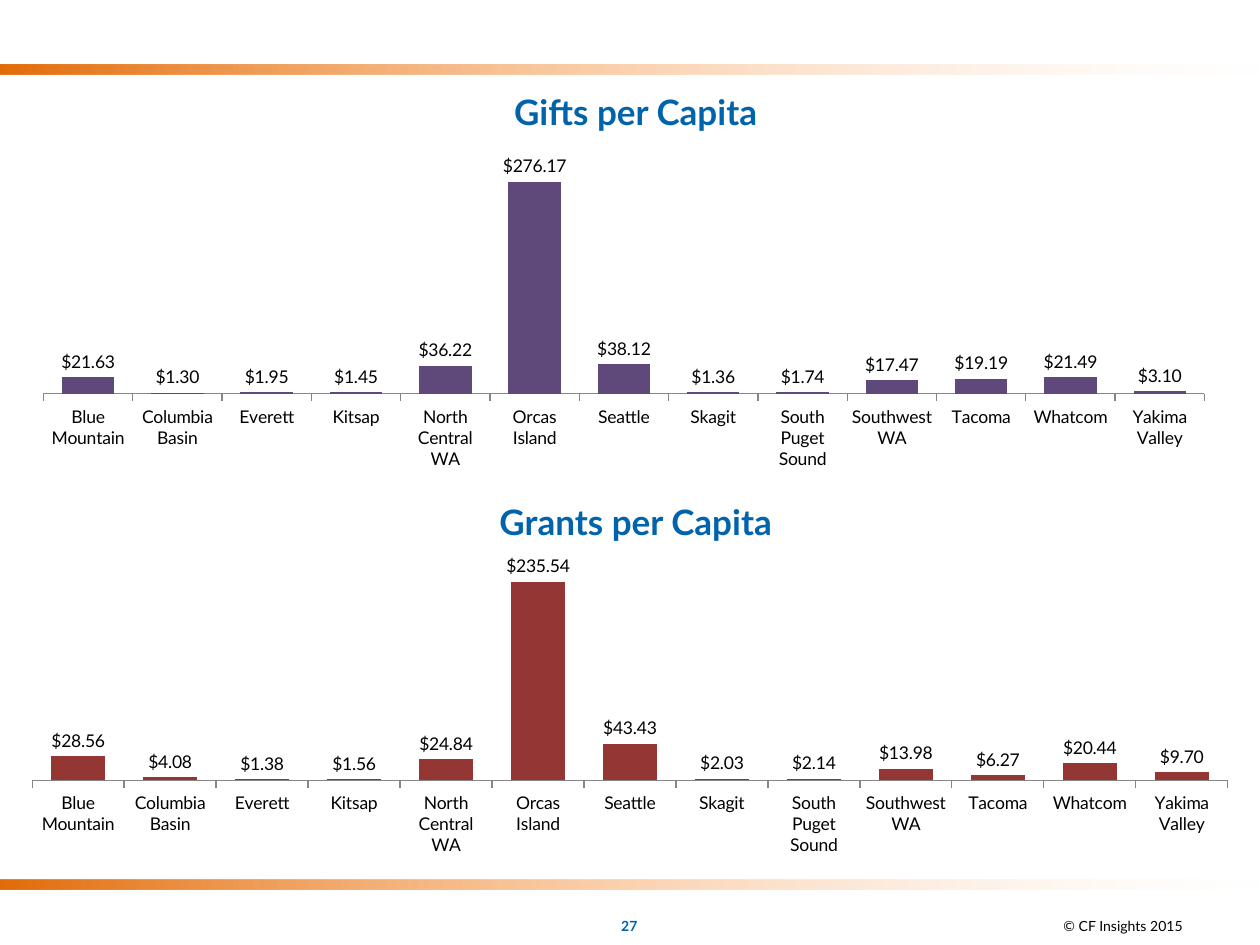
from lxml import etree
from pptx import Presentation
from pptx.chart.data import CategoryChartData
from pptx.dml.color import RGBColor
from pptx.enum.chart import XL_CHART_TYPE, XL_LABEL_POSITION, XL_TICK_MARK
from pptx.enum.shapes import MSO_SHAPE
from pptx.enum.text import MSO_ANCHOR, PP_ALIGN
from pptx.oxml import parse_xml
from pptx.oxml.ns import nsdecls, qn
from pptx.util import Inches, Pt

COLUMN = XL_CHART_TYPE.COLUMN_CLUSTERED
OUT_END = XL_LABEL_POSITION.OUTSIDE_END
OUTSIDE = XL_TICK_MARK.OUTSIDE
RECT = MSO_SHAPE.RECTANGLE
TOP, MIDDLE = MSO_ANCHOR.TOP, MSO_ANCHOR.MIDDLE
CENTER = PP_ALIGN.CENTER

# Content
COLORS = {"blue": "0064AD", "black": "000000", "axis": "868686",
          "gifts": "5F497A", "grants": "943634"}
FONT = "Lato"
MONEY = '"$"#,##0.00'
PLACES = ["Blue Mountain", "Columbia Basin", "Everett", "Kitsap",
          "North Central WA", "Orcas Island", "Seattle", "Skagit",
          "South Puget Sound", "Southwest WA", "Tacoma", "Whatcom",
          "Yakima Valley"]
CHARTS = [
    {"title": "Gifts per Capita", "color": "gifts", "max": 300,
     "head": 0.67, "top": 1.19, "height": 2.65,
     "plot": {"x": 0.01, "y": 0.04, "w": 0.97, "h": 0.69},
     "vals": [21.63, 1.30, 1.95, 1.45, 36.22, 276.17, 38.12, 1.36, 1.74,
              17.47, 19.19, 21.49, 3.10]},
    {"title": "Grants per Capita", "color": "grants", "max": 250,
     "head": 3.92, "top": 4.37, "height": 2.5,
     "plot": {"x": 0, "y": 0.06, "w": 1, "h": 0.67},
     "vals": [28.56, 4.08, 1.38, 1.56, 24.84, 235.54, 43.43, 2.03, 2.14,
              13.98, 6.27, 20.44, 9.70]},
]
BANDS = [6.98, 0.51]
# Gradient stops: position %, colour, opacity %
STOPS = [(0, "E36C09", 100), (50, "F9A661", 50), (100, "FDE1CA", 0)]
HEAD = {"size": Pt(20), "bold": True, "name": FONT}
PAGE = {"size": Pt(8), "bold": True, "name": FONT}
NOTE = {"size": Pt(8), "bold": False, "name": FONT}
LABEL = {"size": Pt(10), "bold": False, "name": FONT}


def rgb(key):
    return RGBColor.from_string(COLORS[key])


def style(font, form, color):
    for key, val in form.items():
        setattr(font, key, val)
    font.color.rgb = rgb(color)


def write(shape, box, text, form, color, anchor):
    shape.left, shape.top, shape.width, shape.height = map(Inches, box)
    frame = shape.text_frame
    frame.word_wrap = True
    frame.vertical_anchor = anchor
    para = frame.paragraphs[0]
    para.alignment = CENTER
    run = para.add_run()
    run.text = text
    style(run.font, form, color)


def add_text(slide, *args):
    write(slide.shapes.add_textbox(0, 0, 0, 0), *args)


def add_band(slide, top):
    band = slide.shapes.add_shape(RECT, 0, Inches(top), Inches(10), Inches(0.08))
    band.shadow.inherit = False
    band.line.fill.background()
    stops = "".join(
        f'<a:gs pos="{pos * 1000}"><a:srgbClr val="{hue}">'
        f'<a:alpha val="{alpha * 1000}"/></a:srgbClr></a:gs>'
        for pos, hue, alpha in STOPS)
    fill = parse_xml(f'<a:gradFill {nsdecls("a")} rotWithShape="1"><a:gsLst>{stops}'
                     '</a:gsLst><a:lin ang="0" scaled="0"/></a:gradFill>')
    band._element.spPr.find(qn("a:prstGeom")).addnext(fill)


def place_plot(chart, plot):
    area = chart._chartSpace.chart.plotArea
    for old in area.findall(qn("c:layout")):
        area.remove(old)
    layout = etree.Element(qn("c:layout"))
    manual = etree.SubElement(layout, qn("c:manualLayout"))
    parts = {"layoutTarget": "inner", "xMode": "edge", "yMode": "edge", **plot}
    for key, val in parts.items():
        etree.SubElement(manual, qn("c:" + key)).set("val", str(val))
    area.insert(0, layout)


def add_chart(slide, item):
    data = CategoryChartData(number_format=MONEY)
    data.categories = PLACES
    data.add_series("Series 1", item["vals"])
    box = map(Inches, (0.25, item["top"], 9.5, item["height"]))
    chart = slide.shapes.add_chart(COLUMN, *box, data).chart
    chart.has_legend = chart.has_title = False
    style(chart.font, LABEL, "black")
    place_plot(chart, item["plot"])

    # Axes
    axis = chart.value_axis
    axis.visible = axis.has_major_gridlines = False
    axis.minimum_scale, axis.maximum_scale = 0, item["max"]
    base = chart.category_axis
    base.major_tick_mark = OUTSIDE
    base.format.line.color.rgb = rgb("axis")
    style(base.tick_labels.font, LABEL, "black")

    # Columns and their labels
    plot = chart.plots[0]
    plot.gap_width, plot.overlap = 70, 23
    plot.vary_by_categories = False
    fill = plot.series[0].format.fill
    fill.solid()
    fill.fore_color.rgb = rgb(item["color"])
    plot.has_data_labels = True
    labels = plot.data_labels
    labels.show_value = True
    labels.position = OUT_END
    labels.number_format = MONEY
    labels.number_format_is_linked = False
    style(labels.font, LABEL, "black")


def main():
    deck = Presentation()
    deck.slide_width, deck.slide_height = Inches(10), Inches(7.5)
    slide = deck.slides.add_slide(deck.slide_layouts[5])

    for top in BANDS:
        add_band(slide, top)

    # Headings and charts
    first, second = CHARTS
    for item in CHARTS:
        args = ((0.65, item["head"], 8.79, 0.44), item["title"], HEAD, "blue", TOP)
        if item is first:
            write(slide.shapes.title, *args)
        else:
            add_text(slide, *args)
        add_chart(slide, item)

    # Footer
    add_text(slide, (7.83, 7.2, 2.17, 0.3), "© CF Insights 2015", NOTE, "black", MIDDLE)
    add_text(slide, (3.83, 7.2, 2.33, 0.3), "27", PAGE, "blue", MIDDLE)
    deck.save("out.pptx")


if __name__ == "__main__":
    main()
